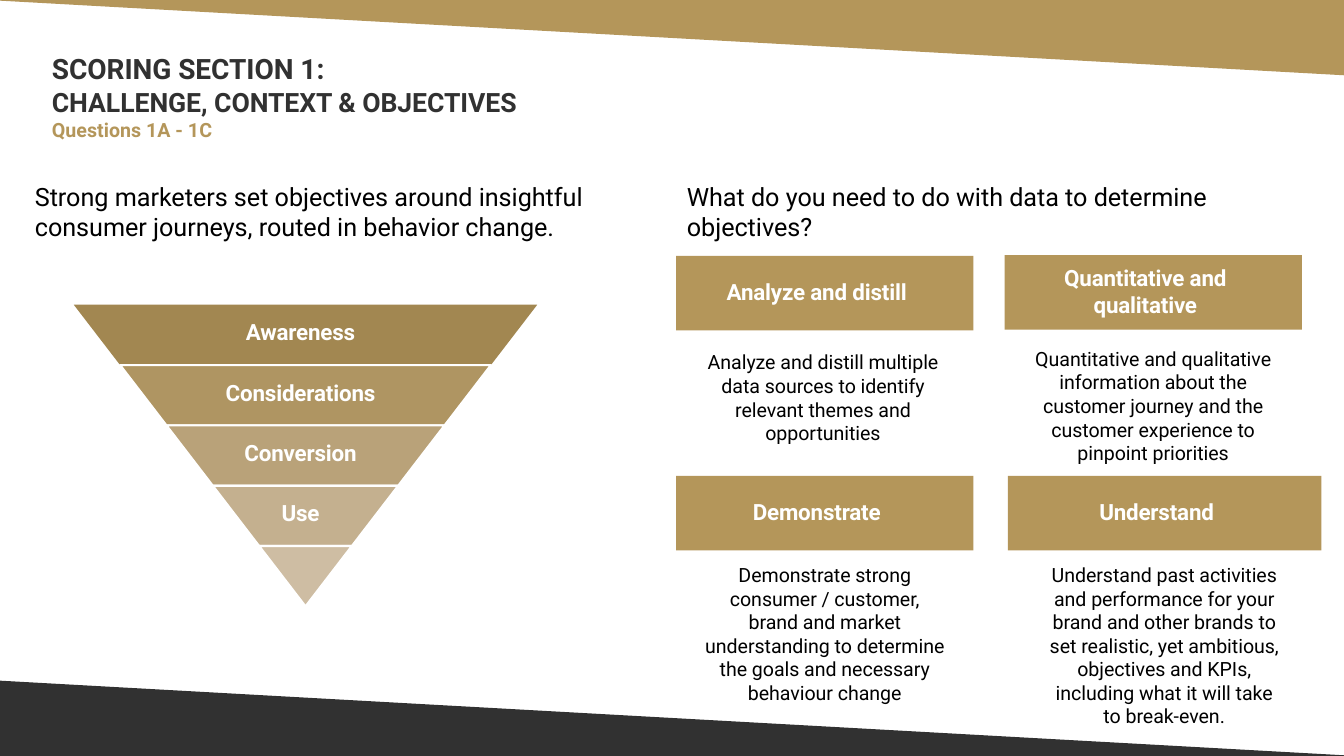
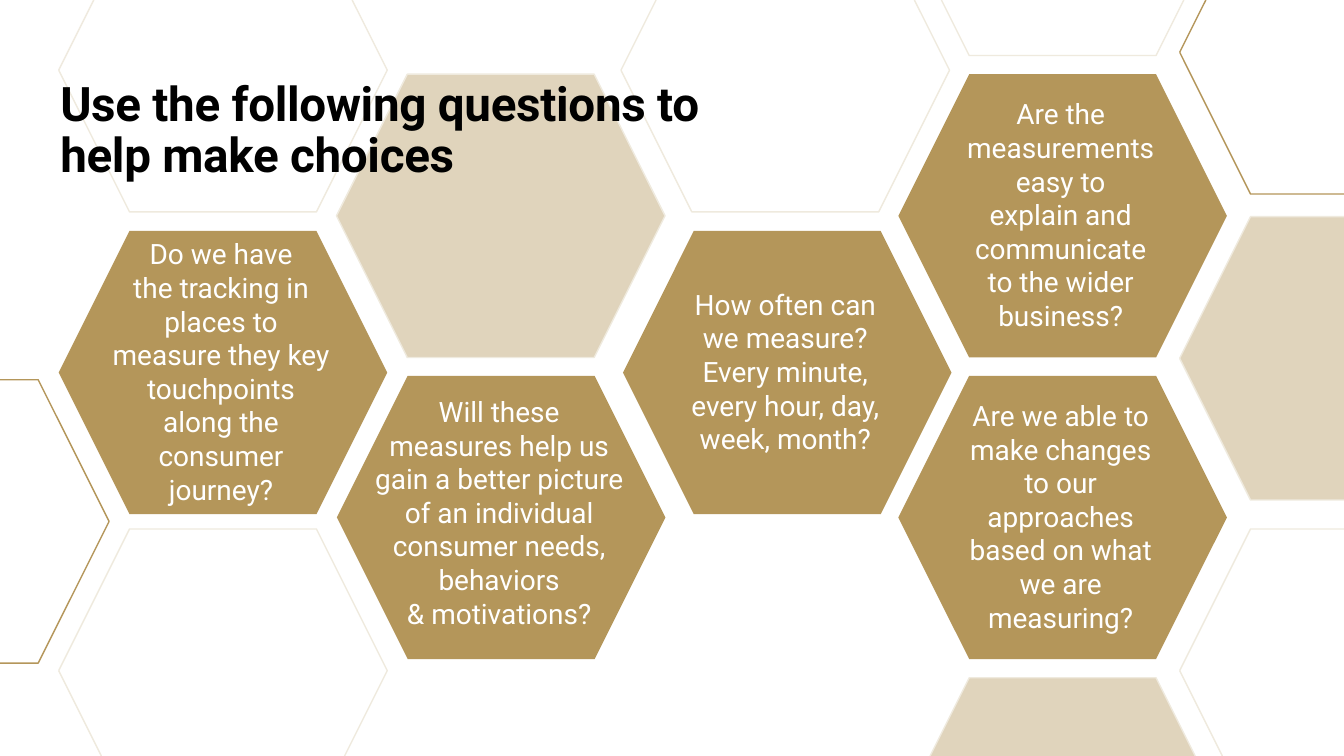
from dataclasses import dataclass

from pptx import Presentation
from pptx.dml.color import RGBColor
from pptx.enum import shapes, text
from pptx.util import Cm, Pt

GOLD = RGBColor(0xB4, 0x96, 0x5A)
TAN = RGBColor(0xE0, 0xD4, 0xBC)
PALE = RGBColor(0xEF, 0xEA, 0xDE)
CHARCOAL = RGBColor(0x31, 0x31, 0x31)
BLACK = RGBColor(0x00, 0x00, 0x00)
WHITE = RGBColor(0xFF, 0xFF, 0xFF)

FONT = "Roboto"
WIDTH, HEIGHT = 33.87, 19.05
LEFT, CENTER = text.PP_ALIGN.LEFT, text.PP_ALIGN.CENTER


@dataclass(frozen=True)
class Style:
    size: float
    color: RGBColor
    bold: bool = False
    spacing: float = -0.07
    line_height: float | None = None


SECTION = Style(20, CHARCOAL, True)
SECTION_NAME = Style(19, CHARCOAL, True, -0.04)
SECTION_QUESTIONS = Style(14, GOLD, True, 0)
LEAD = Style(18, BLACK, spacing=-0.02)
LABEL = Style(16, WHITE, True, -0.1)
BODY = Style(14, BLACK)
QUESTION = Style(20, WHITE, spacing=-0.03)
HEADLINE = Style(34, BLACK, True, -0.21, 36.7)

# Slide 1: lengths in cm
BAND_DEPTH = 1.88
BANDS = [
    (GOLD, [(0, 0), (WIDTH, BAND_DEPTH), (WIDTH, 0)]),
    (CHARCOAL, [(0, HEIGHT - BAND_DEPTH), (0, HEIGHT), (WIDTH, HEIGHT)]),
]
SECTION_BOXES = [
    ((1.31, 1.28, 12, 0.9), [("SCORING SECTION 1:", SECTION)]),
    ((1.31, 2.13, 14, 1.48), [
        ("CHALLENGE, CONTEXT & OBJECTIVES", SECTION_NAME),
        ("Questions 1A - 1C", SECTION_QUESTIONS),
    ]),
]
LEADS = [
    ((0.88, 4.54, 14.6, 1.6),
     "Strong marketers set objectives around insightful\n"
     "consumer journeys, routed in behavior change."),
    ((17.31, 4.54, 14.2, 1.6),
     "What do you need to do with data to determine\nobjectives?"),
]
FUNNEL_CENTER, FUNNEL_TOP, FUNNEL_WIDTH, LAYER_HEIGHT = 7.7, 7.68, 11.68, 1.52
FUNNEL = [
    ("Awareness", RGBColor(0xA2, 0x87, 0x51)),
    ("Considerations", RGBColor(0xAF, 0x95, 0x62)),
    ("Conversion", RGBColor(0xB9, 0xA2, 0x79)),
    ("Use", RGBColor(0xC4, 0xB0, 0x8F)),
    ("", RGBColor(0xCE, 0xBD, 0xA3)),
]
CARD_HEIGHT = 1.88
# (left, top, width) of the label, its text, (left, top, width) of the body, its text
CARDS = [
    ((17.04, 6.45, 7.49), "Analyze and distill", (17.35, 8.8, 6.78),
     "Analyze and distill multiple data sources to identify "
     "relevant themes and opportunities"),
    ((25.32, 6.43, 7.49), "Quantitative and\nqualitative", (25.91, 8.71, 6.3),
     "Quantitative and qualitative information about the customer "
     "journey and the customer experience to pinpoint priorities"),
    ((17.04, 11.99, 7.49), "Demonstrate", (17.65, 14.16, 6.27),
     "Demonstrate strong consumer / customer,\nbrand and market "
     "understanding to determine the goals and necessary behaviour change"),
    ((25.4, 11.99, 7.9), "Understand", (26.19, 14.16, 6.3),
     "Understand past activities and performance for your brand and "
     "other brands to set realistic, yet ambitious, objectives and KPIs, "
     "including what it will take\nto break-even."),
]

# Slide 2: left and top of each hexagon in cm
HEXAGON_WIDTH, HEXAGON_HEIGHT = 8.28, 7.14
# (left, top, fill, line)
BACKGROUND_HEXAGONS = [
    (8.48, 1.87, TAN, PALE),
    (15.65, -1.8, None, PALE),
    (1.48, -1.8, WHITE, PALE),
    (1.48, 13.33, None, PALE),
    (-5.53, 9.57, WHITE, GOLD),
    (29.73, 5.46, TAN, PALE),
    (22.64, 17.08, TAN, PALE),
    (29.73, 13.33, WHITE, PALE),
    (22.64, -5.74, WHITE, PALE),
    (29.73, -2.25, WHITE, GOLD),
]
# (left, top, space below the text, question)
QUESTION_HEXAGONS = [
    (1.48, 5.82, 0.1, "Do we have\nthe tracking in\nplaces to\nmeasure they key\n"
                      "touchpoints\nalong the\nconsumer\njourney?"),
    (8.49, 9.47, 0.3, "Will these\nmeasures help us\ngain a better picture\n"
                      "of an individual\nconsumer needs,\nbehaviors\n& motivations?"),
    (15.7, 5.82, 0.1, "How often can\nwe measure?\nEvery minute,\n"
                      "every hour, day,\nweek, month?"),
    (22.64, 1.87, 0.1, "Are the\nmeasurements\neasy to\nexplain and\ncommunicate\n"
                       "to the wider\nbusiness?"),
    (22.64, 9.47, 0.1, "Are we able to\nmake changes\nto our\napproaches\n"
                       "based on what\nwe are\nmeasuring?"),
]
HEADLINE_BOX = (1.52, 1.8, 17.5, 2.8)
HEADLINE_TEXT = "Use the following questions to\nhelp make choices"


def write(shape, blocks, align=LEFT, middle=False, wrap=True,
          top=0.03, right=0, bottom=0):
    """Fill a shape with one paragraph per (text, style); a newline breaks a line."""
    frame = shape.text_frame
    frame.word_wrap = wrap
    frame.margin_left, frame.margin_top = 0, Cm(top)
    frame.margin_right, frame.margin_bottom = Cm(right), Cm(bottom)
    frame.vertical_anchor = text.MSO_ANCHOR.MIDDLE if middle else text.MSO_ANCHOR.TOP
    for index, (content, style) in enumerate(blocks):
        paragraph = frame.add_paragraph() if index else frame.paragraphs[0]
        paragraph.alignment = align
        if style.line_height:
            paragraph.line_spacing = Pt(style.line_height)
        for number, line in enumerate(content.split("\n")):
            if number:
                paragraph.add_line_break()
            run = paragraph.add_run()
            run.text = line
            run.font.name, run.font.size = FONT, Pt(style.size)
            run.font.bold = style.bold
            run.font.color.rgb = style.color
            run._r.get_or_add_rPr().set("spc", str(round(style.spacing * 100)))


def add_text(slide, box, blocks, **options):
    write(slide.shapes.add_textbox(*map(Cm, box)), blocks, **options)


def paint(shape, fill=None, line=None, line_width=1):
    shape.shadow.inherit = False
    if fill is None:
        shape.fill.background()
    else:
        shape.fill.solid()
        shape.fill.fore_color.rgb = fill
    if line is None:
        shape.line.fill.background()
    else:
        shape.line.color.rgb = line
        shape.line.width = Pt(line_width)
    return shape


def add_preset(slide, preset, box, **colors):
    return paint(slide.shapes.add_shape(preset, *map(Cm, box)), **colors)


def add_outline(slide, strokes, close=False, **colors):
    """Draw one freeform from one or more lists of points."""
    builder = None
    for stroke in strokes:
        start, *others = [(Cm(x), Cm(y)) for x, y in stroke]
        if builder is None:
            builder = slide.shapes.build_freeform(*start)
        else:
            builder.move_to(*start)
        builder.add_line_segments(others, close=close)
    return paint(builder.convert_to_shape(), **colors)


def add_polygon(slide, points, **colors):
    return add_outline(slide, [points], close=True, **colors)


def hexagon_points(left, top):
    inset, middle = HEXAGON_HEIGHT / 4, top + HEXAGON_HEIGHT / 2
    right, bottom = left + HEXAGON_WIDTH, top + HEXAGON_HEIGHT
    return [(left, middle), (left + inset, top), (right - inset, top),
            (right, middle), (right - inset, bottom), (left + inset, bottom)]


def clip_to_slide(points):
    """Cut a convex polygon along the four slide edges."""
    for axis, limit, sign in ((0, 0, 1), (0, WIDTH, -1), (1, 0, 1), (1, HEIGHT, -1)):
        kept = []
        for start, end in zip(points, points[1:] + points[:1]):
            before, after = (sign * (point[axis] - limit) for point in (start, end))
            if before >= 0:
                kept.append(start)
            if before * after < 0:
                share = before / (before - after)
                crossing = [a + share * (b - a) for a, b in zip(start, end)]
                crossing[axis] = limit
                kept.append(tuple(crossing))
        points = kept
    return points


def visible_strokes(points):
    """Split a clipped polygon into lines that leave out the slide edges."""
    strokes, drawing = [], False
    for start, end in zip(points, points[1:] + points[:1]):
        on_edge = any(start[axis] == end[axis] and start[axis] in (0, limit)
                      for axis, limit in enumerate((WIDTH, HEIGHT)))
        if not on_edge:
            if not drawing:
                strokes.append([start])
            strokes[-1].append(end)
        drawing = not on_edge
    return strokes


def add_funnel(slide):
    narrowing = FUNNEL_WIDTH / 2 / len(FUNNEL)
    for index, (label, color) in enumerate(FUNNEL):
        top = FUNNEL_TOP + index * LAYER_HEIGHT
        bottom = top + LAYER_HEIGHT
        upper = narrowing * (len(FUNNEL) - index)
        lower = upper - narrowing
        points = [
            (FUNNEL_CENTER - upper, top), (FUNNEL_CENTER + upper, top),
            (FUNNEL_CENTER + lower, bottom), (FUNNEL_CENTER - lower, bottom),
        ]
        layer = add_polygon(slide, points, fill=color,
                            line=WHITE if index else None, line_width=1.5)
        if label:
            write(layer, [(label, LABEL)], CENTER, middle=True, wrap=False,
                  right=0.25, bottom=0.18)


def build_scoring(slide):
    for color, points in BANDS:
        add_polygon(slide, points, fill=color, line=color)
    for box, blocks in SECTION_BOXES:
        add_text(slide, box, blocks)
    for box, lead in LEADS:
        add_text(slide, box, [(lead, LEAD)])
    add_funnel(slide)
    for label_box, label, (left, top, width), body in CARDS:
        card = add_preset(slide, shapes.MSO_SHAPE.RECTANGLE,
                          (*label_box, CARD_HEIGHT), fill=GOLD)
        write(card, [(label, LABEL)], CENTER, middle=True, right=0.4, bottom=0.1)
        add_text(slide, (left, top, width, 3), [(body, BODY)], align=CENTER)


def build_questions(slide):
    for left, top, fill, line in BACKGROUND_HEXAGONS:
        points = clip_to_slide(hexagon_points(left, top))
        if fill is not None:
            add_polygon(slide, points, fill=fill)
        add_outline(slide, visible_strokes(points), line=line)
    for left, top, space_below, question in QUESTION_HEXAGONS:
        hexagon = add_preset(slide, shapes.MSO_SHAPE.HEXAGON,
                             (left, top, HEXAGON_WIDTH, HEXAGON_HEIGHT), fill=GOLD)
        write(hexagon, [(question, QUESTION)], CENTER, middle=True, wrap=False,
              right=0.1, bottom=space_below)
    add_text(slide, HEADLINE_BOX, [(HEADLINE_TEXT, HEADLINE)], top=0.2)


def main():
    presentation = Presentation()
    presentation.slide_width, presentation.slide_height = Cm(WIDTH), Cm(HEIGHT)
    blank = presentation.slide_layouts[6]
    for build in (build_scoring, build_questions):
        build(presentation.slides.add_slide(blank))
    presentation.save("out.pptx")


if __name__ == "__main__":
    main()
